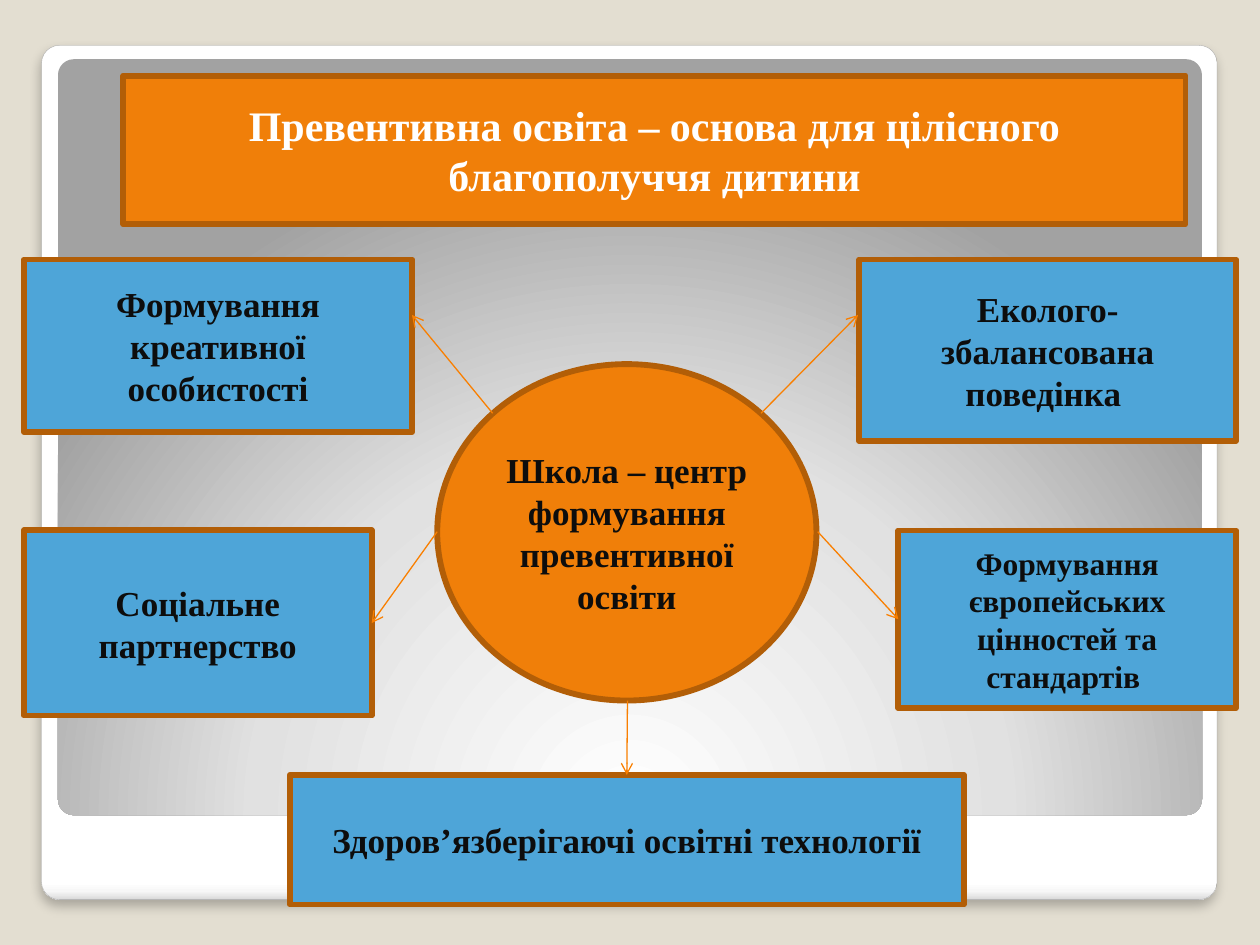
from lxml import etree
from pptx import Presentation
from pptx.dml.color import RGBColor
from pptx.enum.shapes import MSO_CONNECTOR, MSO_SHAPE
from pptx.enum.text import MSO_ANCHOR, PP_ALIGN
from pptx.oxml.ns import qn
from pptx.util import Inches, Pt

RECT, OVAL, ROUND = MSO_SHAPE.RECTANGLE, MSO_SHAPE.OVAL, MSO_SHAPE.ROUNDED_RECTANGLE
STRAIGHT = MSO_CONNECTOR.STRAIGHT
MIDDLE, CENTER = MSO_ANCHOR.MIDDLE, PP_ALIGN.CENTER
LEFT, RIGHT, TOP = 1, 3, 0

FONT = "Times New Roman"
ORANGE, BLUE, BROWN = "F07F09", "4EA5D8", "B25E07"
WHITE, BLACK, ARROW = "FFFFFF", "0D0D0D", "F97F00"

FRAME = (0.33, 0.36, 9.33, 6.78)
PANEL = (0.46, 0.47, 9.08, 6)
FRAME_STOPS = [(0, WHITE), (98, WHITE), (99, "F7F7F7"), (100, "DADADA")]
PANEL_STOPS = [(0, WHITE), (55, "E1E1E1"), (100, "A2A2A2")]

BOXES = {
    "title": (RECT, (0.98, 0.6, 8.43, 1.18), ORANGE, WHITE, 24,
              ["Превентивна освіта – основа для цілісного благополуччя дитини"]),
    "partner": (RECT, (0.19, 4.21, 2.76, 1.47), BLUE, BLACK, 20,
                ["Соціальне", "партнерство"]),
    "health": (RECT, (2.3, 6.15, 5.35, 1.03), BLUE, BLACK, 20,
               ["Здоров’язберігаючі освітні технології"]),
    "eco": (RECT, (6.82, 2.06, 2.99, 1.44), BLUE, BLACK, 20,
            ["Еколого-збалансована поведінка "]),
    "school": (OVAL, (3.47, 2.89, 3.01, 2.67), ORANGE, BLACK, 20,
               ["Школа – центр формування превентивної освіти"]),
    "person": (RECT, (0.19, 2.06, 3.08, 1.37), BLUE, BLACK, 20,
               ["Формування креативної особистості"]),
    "values": (RECT, (7.13, 4.21, 2.68, 1.41), BLUE, BLACK, 18,
               ["Формування європейських цінностей та стандартів "]),
}

ARROWS = [
    ((3.91, 3.28), (3.27, 2.5), None),
    ((6.04, 3.28), (6.81, 2.5), None),
    ((3.47, 4.22), (2.95, 4.95), ("partner", RIGHT)),
    ((6.49, 4.22), (7.13, 4.92), ("values", LEFT)),
    ((4.98, 5.56), (4.98, 6.15), ("health", TOP)),
]


def rgb(code):
    return RGBColor.from_string(code)


def node(parent, tag, **attrs):
    return etree.SubElement(parent, qn(tag), {k: str(v) for k, v in attrs.items()})


def add_shape(slide, kind, at):
    shape = slide.shapes.add_shape(kind, *map(Inches, at))
    shape.shadow.inherit = False
    return shape


def add_card(slide, at, stops):
    card = add_shape(slide, ROUND, at)
    card.adjustments[0] = 0.021
    card.line.fill.background()
    props = card._element.spPr
    grad = node(props, "a:gradFill", rotWithShape=1)
    props.find(qn("a:prstGeom")).addnext(grad)
    group = node(grad, "a:gsLst")
    for pos, code in stops:
        node(node(group, "a:gs", pos=pos * 1000), "a:srgbClr", val=code)
    return card, grad


def add_back(slide):
    frame, grad = add_card(slide, FRAME, FRAME_STOPS)
    node(grad, "a:lin", ang=5400000, scaled=0)
    frame.line.color.rgb = rgb("A4A4A4")
    frame.line.width = Pt(0.16)
    shade = node(frame._element.spPr.find(qn("a:effectLst")), "a:outerShdw",
                 blurRad=Pt(6), dist=Pt(4), dir=5400000, algn="t", rotWithShape=0)
    node(node(shade, "a:srgbClr", val="000000"), "a:alpha", val=25000)
    grad = add_card(slide, PANEL, PANEL_STOPS)[1]
    node(node(grad, "a:path", path="circle"), "a:fillToRect",
         l=50000, t=175000, r=50000, b=-75000)


def add_box(slide, kind, at, fill, ink, size, lines):
    box = add_shape(slide, kind, at)
    box.fill.solid()
    box.fill.fore_color.rgb = rgb(fill)
    box.line.color.rgb = rgb(BROWN)
    box.line.width = Pt(3.35)
    frame = box.text_frame
    frame.word_wrap = True
    frame.vertical_anchor = MIDDLE
    for i, text in enumerate(lines):
        para = frame.add_paragraph() if i else frame.paragraphs[0]
        para.alignment = CENTER
        run = para.add_run()
        run.text = text
        run.font.name, run.font.size, run.font.bold = FONT, Pt(size), True
        run.font.color.rgb = rgb(ink)
    return box


def add_arrow(slide, start, end, joint, boxes):
    arrow = slide.shapes.add_connector(STRAIGHT, *map(Inches, start + end))
    if joint:
        name, side = joint
        arrow.end_connect(boxes[name], side)
    arrow.line.color.rgb = rgb(ARROW)
    arrow.line.width = Pt(0.75)
    node(arrow.line._get_or_add_ln(), "a:tailEnd", type="arrow")
    node(arrow._element.spPr, "a:effectLst")


def main():
    """Build the slide on preventive education and save it."""
    deck = Presentation()
    deck.slide_width, deck.slide_height = Inches(10), Inches(7.5)
    slide = deck.slides.add_slide(deck.slide_layouts[6])
    slide.background.fill.solid()
    slide.background.fill.fore_color.rgb = rgb("E3DED1")
    add_back(slide)
    boxes = {name: add_box(slide, *spec) for name, spec in BOXES.items()}
    for start, end, joint in ARROWS:
        add_arrow(slide, start, end, joint, boxes)
    deck.save("out.pptx")


if __name__ == "__main__":
    main()
